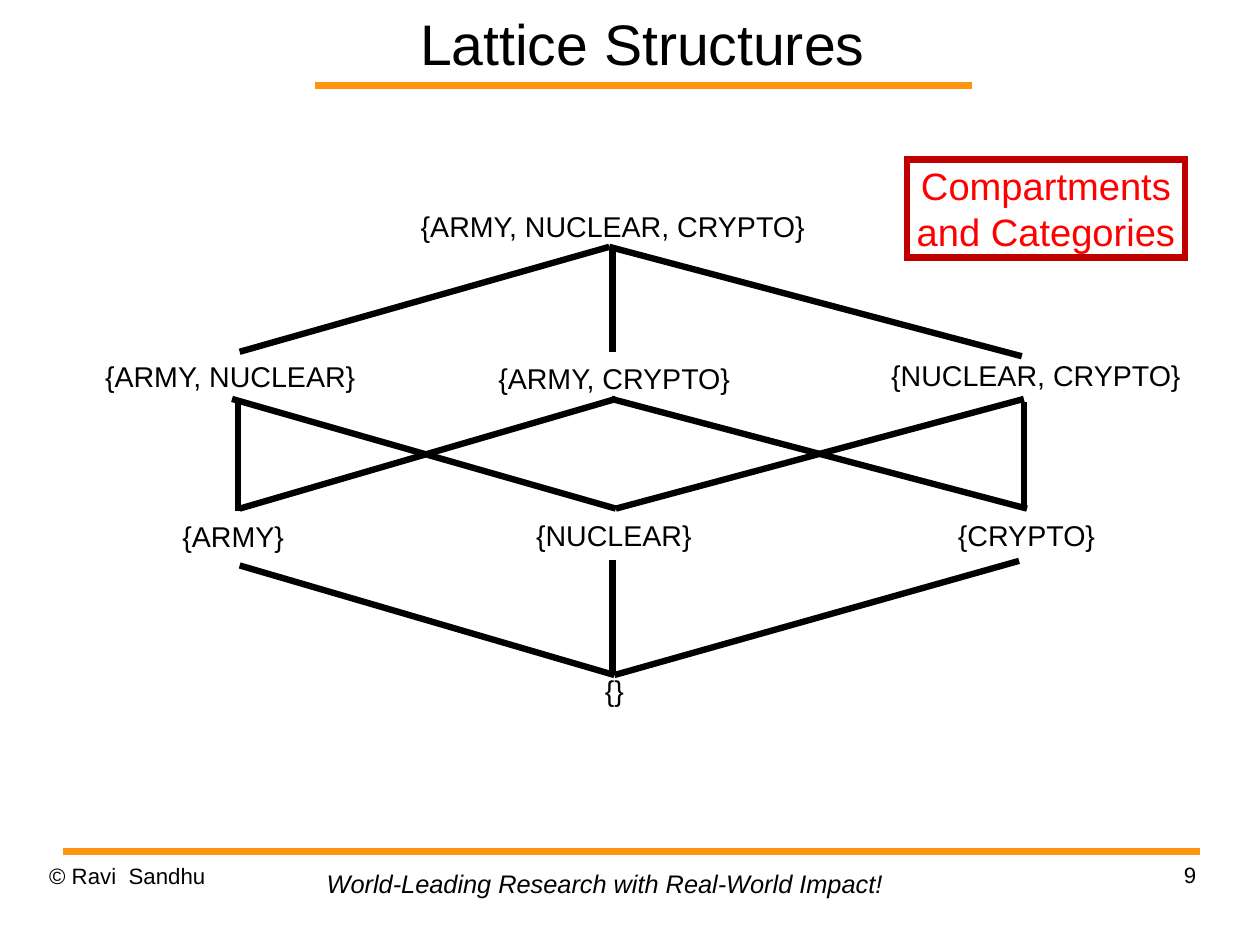
"""Build the Lattice Structures slide: a lattice of compartment sets."""
import pptx
import pptx.dml.color
import pptx.enum.shapes
import pptx.enum.text
import pptx.oxml.ns
import pptx.util

Pt = pptx.util.Pt
PP_ALIGN = pptx.enum.text.PP_ALIGN
ANCHOR = pptx.enum.text.MSO_ANCHOR
AUTO_SIZE = pptx.enum.text.MSO_AUTO_SIZE

COLORS = {"ink": "000000", "rule": "FF950E", "frame": "C00000", "callout": "FF0000"}

deck = pptx.Presentation()
deck.slide_width, deck.slide_height = Pt(793.75), Pt(595.25)
slide = deck.slides.add_slide(deck.slide_layouts[6])


def add_line(start, end, color, width):
    line = slide.shapes.add_connector(
        pptx.enum.shapes.MSO_CONNECTOR.STRAIGHT, *[Pt(v) for v in start + end])
    line.line.color.rgb = pptx.dml.color.RGBColor.from_string(COLORS[color])
    line.line.width = Pt(width)
    properties = line._element.spPr
    properties.append(properties.makeelement(pptx.oxml.ns.qn("a:effectLst"), {}))
    return line


def fill_text(shape, lines, size, color="ink", align=PP_ALIGN.LEFT, inset=(0, 0),
              spacing=None, italic=False, **frame_format):
    frame = shape.text_frame
    side, edge = [Pt(v) for v in inset]
    frame_values = {"word_wrap": True, "auto_size": AUTO_SIZE.NONE,
                    "vertical_anchor": ANCHOR.TOP, "margin_left": side,
                    "margin_right": side, "margin_top": edge, "margin_bottom": edge}
    for name, value in {**frame_values, **frame_format}.items():
        setattr(frame, name, value)
    frame.text = "\n".join(lines)
    for paragraph in frame.paragraphs:
        paragraph.alignment = align
        paragraph.line_spacing = spacing
        for name, value in {"name": "Arial", "size": Pt(size), "italic": italic}.items():
            setattr(paragraph.font, name, value)
        paragraph.font.color.rgb = pptx.dml.color.RGBColor.from_string(COLORS[color])


GROW = {"word_wrap": False, "auto_size": AUTO_SIZE.SHAPE_TO_FIT_TEXT}

for start, end in [((198.5, 54), (612.5, 54)), ((39.4, 536.2), (755.8, 536.2))]:
    add_line(start, end, "rule", 4.31)

page_texts = [
    ("© Ravi  Sandhu", (31, 543.3, 185, 41), {"size": 14, "spacing": 1.01}),
    ("9", (568.6, 542.2, 185, 41), {"size": 14, "spacing": 1.01, "align": PP_ALIGN.RIGHT}),
    ("World-Leading Research with Real-World Impact!", (198.7, 543.6, 365.8, 26.6),
     {"size": 16, "italic": True, "inset": (7.2, 3.6), **GROW}),
    ("Lattice Structures", (173.2, 0, 463, 54),
     {"size": 36, "align": PP_ALIGN.CENTER, "vertical_anchor": ANCHOR.MIDDLE}),
]
for text, place, text_format in page_texts:
    fill_text(slide.shapes.add_textbox(*[Pt(v) for v in place]), [text], **text_format)

callout = slide.shapes.add_shape(
    pptx.enum.shapes.MSO_SHAPE.RECTANGLE, Pt(571.4), Pt(100.4), Pt(175), Pt(61.9))
callout.shadow.inherit = False
callout.fill.background()
callout.line.color.rgb = pptx.dml.color.RGBColor.from_string(COLORS["frame"])
callout.line.width = Pt(4)
outline = callout.line._get_or_add_ln()
outline.append(outline.makeelement(pptx.oxml.ns.qn("a:miter"), {"lim": "800000"}))
fill_text(callout, ["Compartments", "and Categories"], 24, "callout",
          PP_ALIGN.CENTER, (5, 2.2), **GROW)

compartment_sets = [
    ("{ARMY, NUCLEAR, CRYPTO}", 254, 133, 264.2),
    ("{ARMY, NUCLEAR}", 55.4, 227.2, 179.3),
    ("{ARMY, CRYPTO}", 303.8, 228.2, 166.3),
    ("{NUCLEAR, CRYPTO}", 552.2, 226.5, 200.9),
    ("{ARMY}", 106.6, 328, 80.6),
    ("{NUCLEAR}", 328.8, 327.3, 115.9),
    ("{CRYPTO}", 595.2, 327.3, 103),
    ("{}", 373, 425.2, 28.1),
]
set_labels = {}
for text, left, top, width in compartment_sets:
    label = slide.shapes.add_textbox(Pt(left), Pt(top), Pt(width), Pt(26.6))
    fill_text(label, [text], 18, align=PP_ALIGN.CENTER, inset=(5, 2.2), spacing=0.85, **GROW)
    set_labels[text] = label

for end in [(151, 356.2), (642, 353.3)]:
    edge = add_line((387, 425.2), end, "ink", 4)
    edge.begin_connect(set_labels["{}"], 0)

lattice_edges = [
    ((385.9, 425.2), (385.9, 352.6)),
    ((149.8, 321.6), (149.8, 250.6)),
    ((645, 320.4), (645, 253.4)),
    ((151, 221.6), (383.8, 155.5)),
    ((385.9, 221.6), (385.9, 155.5)),
    ((643.7, 224.4), (383.8, 155.5)),
    ((388, 320.4), (146.2, 251.3)),
    ((388, 320.4), (645, 251.3)),
    ((151, 320.4), (388, 251.3)),
    ((647, 320.4), (385.2, 251.3)),
]
for start, end in lattice_edges:
    add_line(start, end, "ink", 4)

deck.save("out.pptx")
